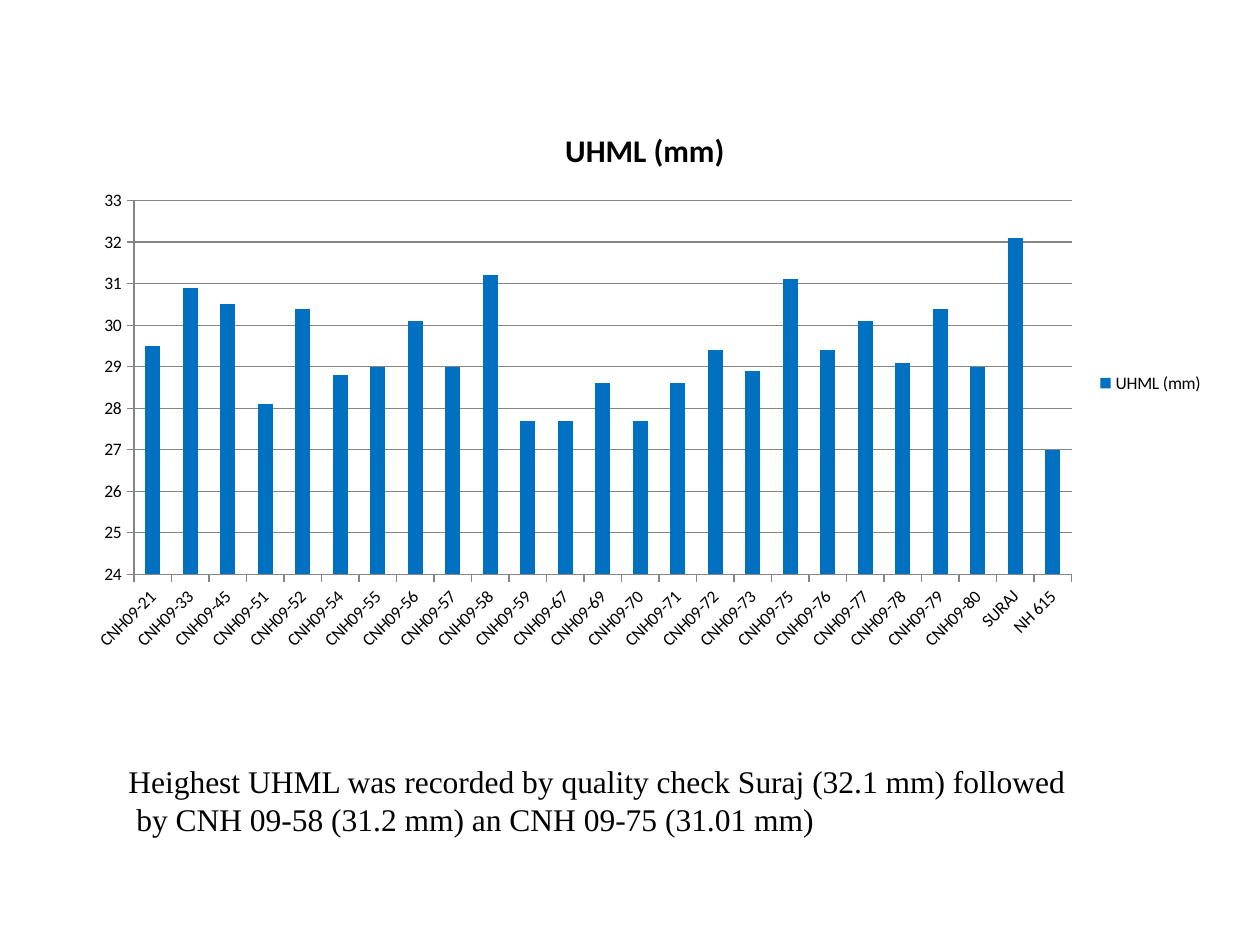
"""Build a slide with a column chart of UHML by cotton line and a closing remark."""
from pptx import Presentation
from pptx.chart.data import CategoryChartData
from pptx.dml.color import RGBColor
from pptx.enum.chart import XL_CHART_TYPE, XL_LEGEND_POSITION, XL_TICK_MARK
from pptx.enum.text import MSO_AUTO_SIZE, PP_ALIGN
from pptx.util import Cm, Pt

TITLE = "UHML (mm)"
UHML = {
    "CNH09-21": 29.5, "CNH09-33": 30.9, "CNH09-45": 30.5, "CNH09-51": 28.1,
    "CNH09-52": 30.4, "CNH09-54": 28.8, "CNH09-55": 29, "CNH09-56": 30.1,
    "CNH09-57": 29, "CNH09-58": 31.2, "CNH09-59": 27.7, "CNH09-67": 27.7,
    "CNH09-69": 28.6, "CNH09-70": 27.7, "CNH09-71": 28.6, "CNH09-72": 29.4,
    "CNH09-73": 28.9, "CNH09-75": 31.1, "CNH09-76": 29.4, "CNH09-77": 30.1,
    "CNH09-78": 29.1, "CNH09-79": 30.4, "CNH09-80": 29, "SURAJ": 32.1,
    "NH 615": 27,
}
REMARK = [
    "Heighest UHML was recorded by quality check Suraj (32.1 mm) followed",
    " by CNH 09-58 (31.2 mm) an CNH 09-75 (31.01 mm)",
]
CHART_BOX = Cm(1.47), Cm(2.11), Cm(23.06), Cm(11.23)
REMARK_BOX = Cm(2.34), Cm(15.24), Cm(19.61), Cm(1.8)
BLACK, BLUE, GRAY = "000000", "0070C0", "868686"


def rgb(value):
    return RGBColor.from_string(value)


def style(font, **formats):
    for name, value in formats.items():
        setattr(font, name, value)
    font.color.rgb = rgb(BLACK)


def add_uhml_chart(s):
    data = CategoryChartData()
    data.categories = list(UHML)
    data.add_series(TITLE, UHML.values())
    chart = s.shapes.add_chart(XL_CHART_TYPE.COLUMN_CLUSTERED, *CHART_BOX, data).chart
    style(chart.font, name="Calibri", size=Pt(10))

    chart.has_title = True
    tf = chart.chart_title.text_frame
    tf.text = TITLE
    style(tf.paragraphs[0].runs[0].font, name="Calibri", size=Pt(18), bold=True)
    chart.has_legend = True
    chart.legend.position = XL_LEGEND_POSITION.RIGHT
    chart.legend.include_in_layout = False

    plot = chart.plots[0]
    plot.gap_width = 150
    plot.vary_by_categories = False
    fill = plot.series[0].format.fill
    fill.solid()
    fill.fore_color.rgb = rgb(BLUE)

    values = chart.value_axis
    values.minimum_scale, values.maximum_scale, values.major_unit = 24, 33, 1
    values.has_major_gridlines = True
    chart.category_axis.major_tick_mark = values.major_tick_mark = XL_TICK_MARK.OUTSIDE
    for part in (chart.category_axis, values, values.major_gridlines):
        part.format.line.color.rgb = rgb(GRAY)
        part.format.line.width = Pt(0.75)


def add_remark(s):
    tf = s.shapes.add_textbox(*REMARK_BOX).text_frame
    tf.word_wrap = False
    tf.auto_size = MSO_AUTO_SIZE.SHAPE_TO_FIT_TEXT
    for i, line in enumerate(REMARK):
        p = tf.add_paragraph() if i else tf.paragraphs[0]
        p.alignment = PP_ALIGN.JUSTIFY
        r = p.add_run()
        r.text = line
        style(r.font, name="Times New Roman", size=Pt(18))


def main():
    prs = Presentation()
    prs.slide_width, prs.slide_height = Cm(25.4), Cm(19.05)
    s = prs.slides.add_slide(prs.slide_layouts[6])
    add_uhml_chart(s)
    add_remark(s)
    prs.save("out.pptx")


if __name__ == "__main__":
    main()
